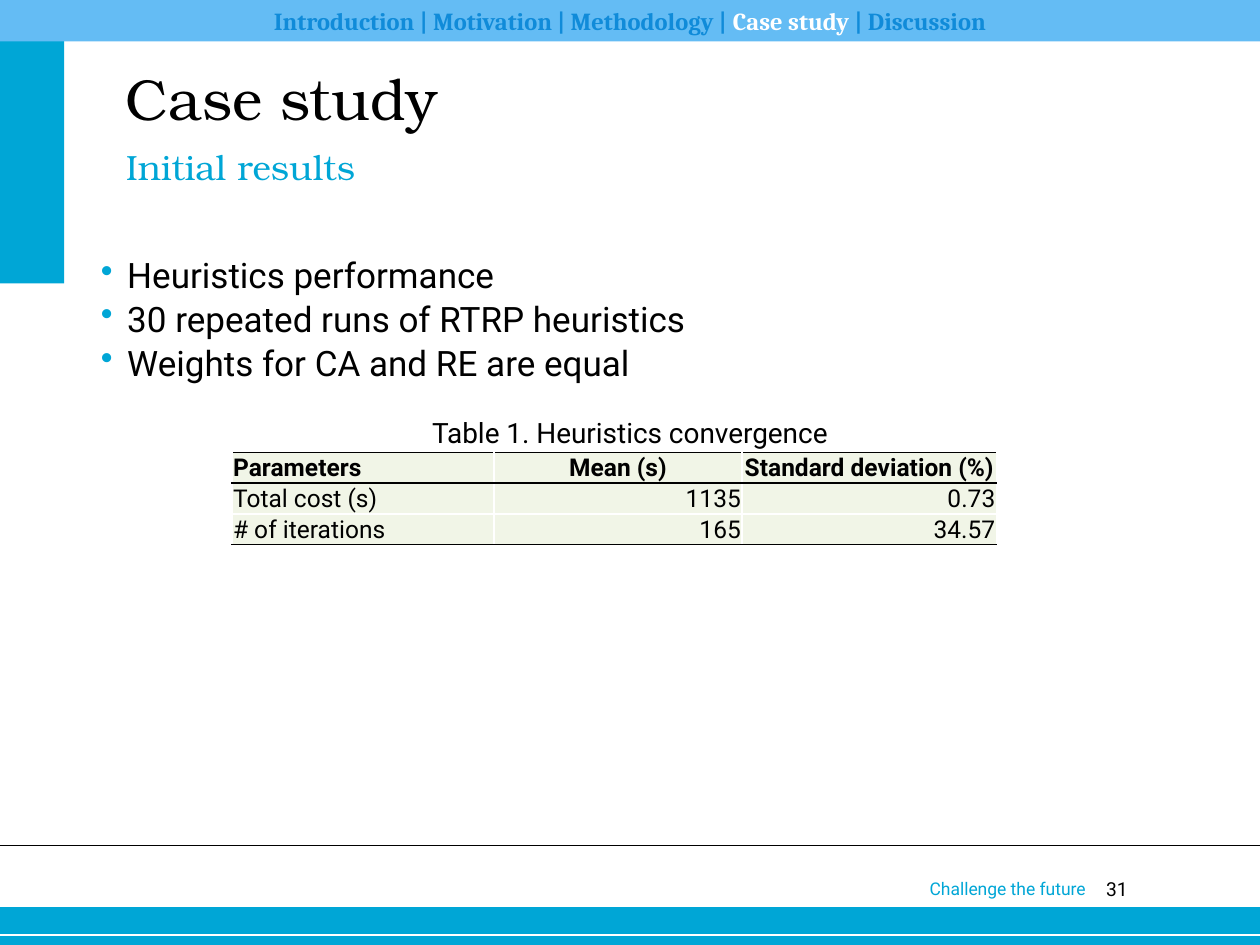
import pptx
import pptx.util
import pptx.dml.color
import pptx.enum.shapes
import pptx.enum.text
import pptx.oxml.ns
import lxml.etree

Inches = pptx.util.Inches
Pt = pptx.util.Pt
ALIGN = pptx.enum.text.PP_ALIGN
MIDDLE = pptx.enum.text.MSO_ANCHOR.MIDDLE
qn = pptx.oxml.ns.qn

CYAN, BLACK, WHITE = "00A6D6", "000000", "FFFFFF"
SKY, NAV_BLUE, PALE_GREEN = "64BCF4", "108BD9", "F1F5E7"
SANS, DISPLAY = "Roboto", "TeX Gyre Bonum"


def paint(fill, color):
    fill.solid()
    fill.fore_color.rgb = pptx.dml.color.RGBColor.from_string(color)


def write(paragraph, text, size, font=SANS, color=BLACK, bold=False,
          align=ALIGN.LEFT, spacing=None):
    """Append a formatted run to the paragraph."""
    run = paragraph.add_run()
    run.text = text
    run.font.size = Pt(size)
    run.font.name = font
    run.font.bold = bold
    paint(run.font.fill, color)
    paragraph.alignment = align
    if spacing:
        paragraph.line_spacing = Pt(spacing)


presentation = pptx.Presentation()
presentation.slide_width = Inches(10)
presentation.slide_height = Inches(7.5)
slide = presentation.slides.add_slide(presentation.slide_layouts[6])
shapes = slide.shapes

# Coloured bands; the last one is the navigation bar
for left, top, width, height, color in [
    (0, 7.2, 10, 0.3, CYAN),
    (0, 0, 0.51, 2.25, CYAN),
    (0, 0, 10, 0.33, SKY),
]:
    band = shapes.add_shape(
        pptx.enum.shapes.MSO_SHAPE.RECTANGLE,
        Inches(left), Inches(top), Inches(width), Inches(height))
    band.shadow.inherit = False
    paint(band.fill, color)
    band.line.fill.background()

navigation = band.text_frame
navigation.word_wrap = False
navigation.vertical_anchor = MIDDLE
for text, color in [
    ("Introduction | Motivation | Methodology | ", NAV_BLUE),
    ("Case study", WHITE),
    (" | Discussion", NAV_BLUE),
]:
    write(navigation.paragraphs[0], text, 14, font="Cambria", color=color,
          bold=True, align=ALIGN.CENTER)

# Footer rules
for y, color, weight in [(7.42, WHITE, 0.75), (6.71, BLACK, 1)]:
    rule = shapes.add_connector(
        pptx.enum.shapes.MSO_CONNECTOR.STRAIGHT,
        Inches(0), Inches(y), Inches(10), Inches(y))
    paint(rule.line.fill, color)
    rule.line.width = Pt(weight)
    lxml.etree.SubElement(rule._element.spPr, qn("a:effectLst"))

# Single-line texts: place, inner margins (x, y), wording, format
for left, top, width, height, margins, text, style in [
    (8.46, 6.96, 0.49, 0.28, (0, 0), "31", dict(size=11, align=ALIGN.RIGHT)),
    (7.28, 6.92, 1.6, 0.27, (0.1, 0.05), "Challenge the future",
     dict(size=10, color=CYAN)),
    (1, 0.5, 7.83, 1.36, (0, 0), "Case study", dict(size=33, font=DISPLAY)),
    (1, 1.14, 7.42, 0.52, (0, 0), "Initial results",
     dict(size=20, font=DISPLAY, color=CYAN, spacing=25)),
    (0, 3.25, 10, 0.37, (0.1, 0.05), "Table 1. Heuristics convergence",
     dict(size=16, align=ALIGN.CENTER)),
]:
    frame = shapes.add_textbox(
        Inches(left), Inches(top), Inches(width), Inches(height)).text_frame
    frame.word_wrap = True
    frame.margin_left = frame.margin_right = Inches(margins[0])
    frame.margin_top = frame.margin_bottom = Inches(margins[1])
    write(frame.paragraphs[0], text, **style)

# Bullet list
points = shapes.add_textbox(
    Inches(0.8), Inches(2), Inches(5.59), Inches(4.62)).text_frame
points.word_wrap = True
points.margin_left = points.margin_right = 0
points.margin_top = points.margin_bottom = 0
for index, text in enumerate([
    "Heuristics performance",
    "30 repeated runs of RTRP heuristics",
    "Weights for CA and RE are equal",
]):
    point = points.add_paragraph() if index else points.paragraphs[0]
    properties = point._p.get_or_add_pPr()
    properties.set("marL", str(Inches(0.21)))
    properties.set("indent", str(-Inches(0.21)))
    bullet_color = lxml.etree.SubElement(properties, qn("a:buClr"))
    lxml.etree.SubElement(bullet_color, qn("a:srgbClr"), val=CYAN)
    lxml.etree.SubElement(properties, qn("a:buChar"), char="•")
    write(point, text, 20, spacing=25)

# Convergence table
results = [
    ["Parameters", "Mean (s)", "Standard deviation (%)"],
    ["Total cost (s)", "1135", "0.73"],
    ["# of iterations", "165", "34.57"],
]
column_widths = [2.08, 1.97, 2.02]
row_height = 0.24
table = shapes.add_table(
    len(results), len(column_widths), Inches(1.84), Inches(3.59),
    Inches(sum(column_widths)), Inches(row_height * len(results))).table
for column, width in zip(table.columns, column_widths):
    column.width = Inches(width)

for r, values in enumerate(results):
    table.rows[r].height = Inches(row_height)
    is_header = r == 0
    is_last = r == len(results) - 1
    borders = {
        "a:lnL": WHITE,
        "a:lnR": WHITE,
        "a:lnT": WHITE if is_last else BLACK,
        "a:lnB": BLACK if is_header or is_last else WHITE,
    }
    for c, value in enumerate(values):
        cell = table.cell(r, c)
        cell.margin_left = cell.margin_right = cell.margin_top = Inches(0.01)
        cell.margin_bottom = 0
        cell.vertical_anchor = MIDDLE
        for side, color in borders.items():
            border = lxml.etree.SubElement(
                cell._tc.get_or_add_tcPr(), qn(side), w=str(Pt(1)))
            border_fill = lxml.etree.SubElement(border, qn("a:solidFill"))
            lxml.etree.SubElement(border_fill, qn("a:srgbClr"), val=color)
        paint(cell.fill, PALE_GREEN)
        if c == 0:
            align = ALIGN.LEFT
        else:
            align = ALIGN.CENTER if is_header else ALIGN.RIGHT
        write(cell.text_frame.paragraphs[0], value, 14, bold=is_header,
              align=align)

presentation.save("out.pptx")
